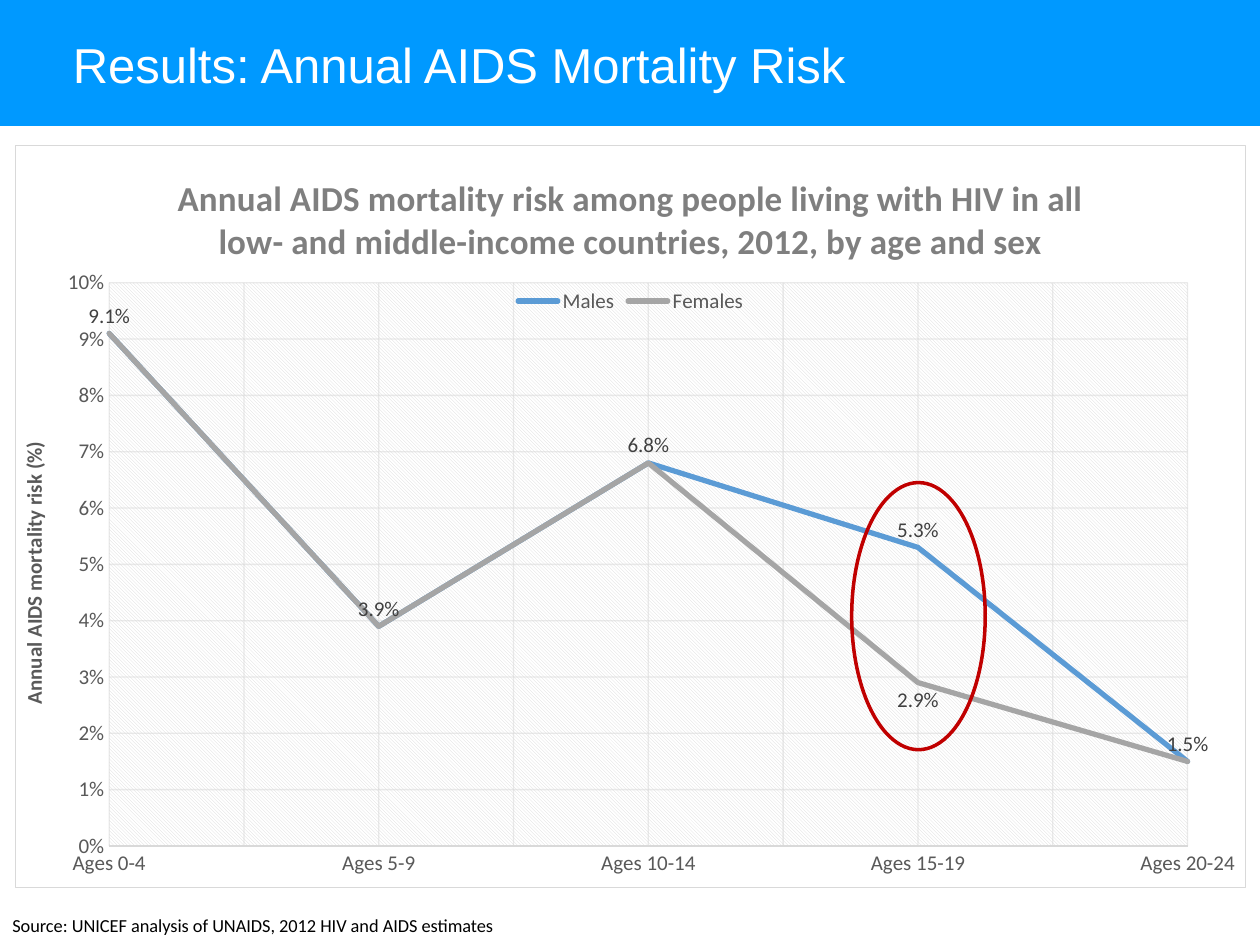
from copy import deepcopy

from pptx import Presentation
from pptx.chart.data import CategoryChartData
from pptx.dml.color import RGBColor
from pptx.enum.chart import XL_CHART_TYPE, XL_LABEL_POSITION, XL_LEGEND_POSITION, XL_TICK_MARK
from pptx.enum.shapes import MSO_SHAPE
from pptx.enum.text import MSO_ANCHOR
from pptx.oxml import parse_xml
from pptx.oxml.ns import nsdecls, qn
from pptx.util import Inches, Pt
from lxml.etree import SubElement

# Content
TITLE = "Results: Annual AIDS Mortality Risk"
SOURCE = "Source: UNICEF analysis of UNAIDS, 2012 HIV and AIDS estimates"
CHART_TITLE = ("Annual AIDS mortality risk among people living with HIV in all "
               "low- and middle-income countries, 2012, by age and sex")
AXIS_TITLE = "Annual AIDS mortality risk (%)"
AGES = ["Ages 0-4", "Ages 5-9", "Ages 10-14", "Ages 15-19", "Ages 20-24"]
RISK = {
    "Males": [0.091, 0.039, 0.068, 0.053, 0.015],
    "Females": [0.091, 0.039, 0.068, 0.029, 0.015],
}
GAP_AGE = AGES.index("Ages 15-19")
PLOT_LAYOUT = {"x": 0.076, "y": 0.185, "w": 0.877, "h": 0.759}

THEME = {
    "banner": "0099FF", "white": "FFFFFF", "black": "000000",
    "grid": "D9D9D9", "axis": "595959", "label": "404040", "heading": "7F7F7F",
    "ring": "C00000", "Males": "5B9BD5", "Females": "A5A5A5",
    "title_size": 28, "heading_size": 20, "chart_size": 12, "source_size": 10.5,
    "title_font": "Arial", "body_font": "Calibri",
}


def style_font(font, size, color, name=THEME["body_font"], bold=False):
    font.size, font.name, font.bold = Pt(size), name, bold
    font.color.rgb = RGBColor.from_string(THEME[color])


def write_text(frame, text, **style):
    paragraph = frame.paragraphs[0]
    span = paragraph.add_run()
    span.text = text
    style_font(span.font, **style)
    return paragraph


def add_text(page, text, place, anchor=MSO_ANCHOR.TOP, **style):
    frame = page.shapes.add_textbox(*map(Inches, place)).text_frame
    frame.word_wrap, frame.vertical_anchor = True, anchor
    return write_text(frame, text, **style)


def add_plain_shape(page, kind, place):
    shape = page.shapes.add_shape(kind, *map(Inches, place))
    shape.shadow.inherit = False
    shape.fill.background()
    shape.line.fill.background()
    return shape


def style_line(line, color, width):
    line.color.rgb = RGBColor.from_string(THEME[color])
    line.width = Pt(width)


def style_gridlines(gridlines):
    style_line(gridlines.format.line, "grid", 0.75)
    for color in gridlines.format.line._ln.iter(qn("a:srgbClr")):
        SubElement(color, qn("a:alpha")).set("val", "54000")


def style_labels(labels, position):
    style_font(labels.font, THEME["chart_size"], "label")
    labels.number_format, labels.number_format_is_linked = "0.0%", False
    labels.show_value, labels.position = True, position


def style_areas(chart):
    """Set the plot position, its hatching and the frame around the chart."""
    space = chart._chartSpace
    plot_area = space.chart.plotArea
    for old in plot_area.findall(qn("c:layout")):
        plot_area.remove(old)
    sizes = "".join(f'<c:{key} val="{value}"/>' for key, value in PLOT_LAYOUT.items())
    plot_area.insert(0, parse_xml(
        f'<c:layout {nsdecls("c")}><c:manualLayout><c:layoutTarget val="inner"/>'
        f'<c:xMode val="edge"/><c:yMode val="edge"/>{sizes}</c:manualLayout></c:layout>'))
    grid, white = (f'<a:srgbClr val="{THEME[name]}"/>' for name in ("grid", "white"))
    plot_area.append(parse_xml(
        f'<c:spPr {nsdecls("c", "a")}><a:pattFill prst="ltDnDiag"><a:fgClr>{grid}</a:fgClr>'
        f'<a:bgClr>{white}</a:bgClr></a:pattFill></c:spPr>'))
    space.chart.addnext(parse_xml(
        f'<c:spPr {nsdecls("c", "a")}><a:solidFill>{white}</a:solidFill>'
        f'<a:ln w="{Pt(0.75)}"><a:solidFill>{grid}</a:solidFill></a:ln></c:spPr>'))


def add_risk_chart(page, place):
    data = CategoryChartData(number_format="0.0%")
    data.categories = AGES
    for name, values in RISK.items():
        data.add_series(name, values)
    chart = page.shapes.add_chart(XL_CHART_TYPE.LINE, *map(Inches, place), data).chart
    size = THEME["chart_size"]
    style_font(chart.font, size, "axis")
    write_text(chart.chart_title.text_frame, CHART_TITLE,
               size=THEME["heading_size"], color="heading", bold=True)
    chart.has_legend = True
    chart.legend.position = XL_LEGEND_POSITION.TOP
    chart.legend.include_in_layout = False
    style_font(chart.legend.font, size, "axis")

    # Axes
    ages, risk = chart.category_axis, chart.value_axis
    for axis in (ages, risk):
        axis.major_tick_mark = axis.minor_tick_mark = XL_TICK_MARK.NONE
        style_font(axis.tick_labels.font, size, "axis")
        style_gridlines(axis.major_gridlines)
    ages.has_minor_gridlines = True
    major, minor = (ages._element.find(qn(f"c:{kind}Gridlines")) for kind in ("major", "minor"))
    minor.append(deepcopy(major.find(qn("c:spPr"))))
    style_line(ages.format.line, "grid", 0.75)
    risk.format.line.fill.background()
    risk.minimum_scale, risk.maximum_scale, risk.major_unit = 0, 0.1, 0.01
    risk.tick_labels.number_format = "0%"
    risk.tick_labels.number_format_is_linked = False
    write_text(risk.axis_title.text_frame, AXIS_TITLE, size=size, color="axis", bold=True)
    crossing = risk._element.find(qn("c:crossBetween"))
    if crossing is None:
        crossing = parse_xml(f'<c:crossBetween {nsdecls("c")}/>')
        risk._element.find(qn("c:majorUnit")).addprevious(crossing)
    crossing.set("val", "midCat")

    # Series and labels
    males, females = chart.plots[0].series
    for series in (males, females):
        series.smooth = False
        style_line(series.format.line, series.name, 3)
        series.format.line._ln.set("cap", "rnd")
    style_labels(males.data_labels, XL_LABEL_POSITION.ABOVE)
    style_labels(females.data_labels, XL_LABEL_POSITION.BELOW)
    females.data_labels.show_value = False
    gap_label = females.points[GAP_AGE].data_label
    style_font(gap_label.font, size, "label")
    gap_label.position = XL_LABEL_POSITION.BELOW
    style_areas(chart)


def main():
    deck = Presentation()
    deck.slide_width, deck.slide_height = Inches(10), Inches(7.5)
    page = deck.slides.add_slide(deck.slide_layouts[6])

    # Banner and title
    banner = add_plain_shape(page, MSO_SHAPE.RECTANGLE, (0, 0, 10, 1))
    banner.fill.solid()
    banner.fill.fore_color.rgb = RGBColor.from_string(THEME["banner"])
    title = add_text(page, TITLE, (0.48, 0.26, 8.79, 0.55), MSO_ANCHOR.MIDDLE,
                     size=THEME["title_size"], color="white", name=THEME["title_font"])
    title.line_spacing = 0.9

    # Source, chart and ring around the gap between the sexes
    add_text(page, SOURCE, (0, 7.21, 8.17, 0.29), size=THEME["source_size"], color="black")
    add_risk_chart(page, (0.12, 1.15, 9.77, 5.9))
    ring = add_plain_shape(page, MSO_SHAPE.OVAL, (6.76, 3.83, 1.06, 2.12))
    style_line(ring.line, "ring", 2)

    deck.save("out.pptx")


if __name__ == "__main__":
    main()
